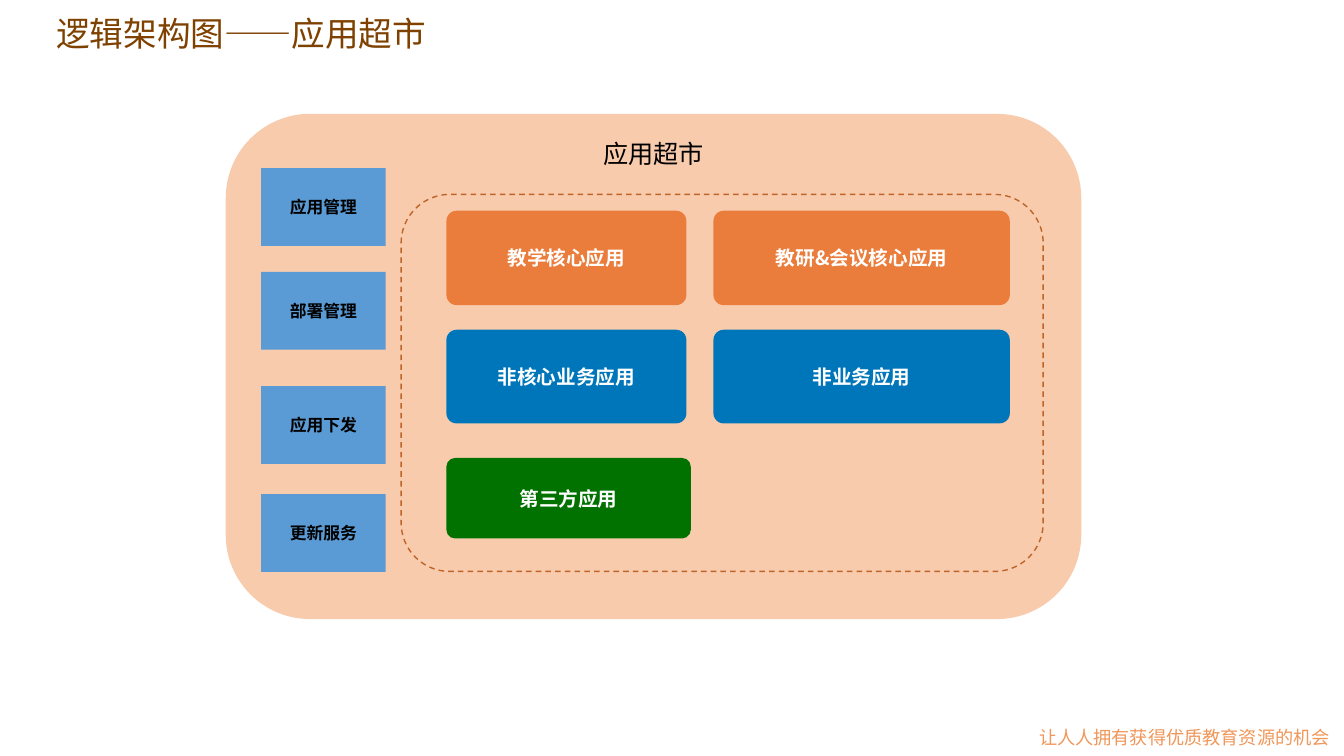
from dataclasses import dataclass

from lxml import etree
from pptx import Presentation
from pptx.dml.color import RGBColor
from pptx.enum.dml import MSO_LINE
from pptx.enum.shapes import MSO_SHAPE
from pptx.enum.text import MSO_ANCHOR, PP_ALIGN
from pptx.oxml.ns import qn
from pptx.util import Cm, Pt

RECTANGLE = MSO_SHAPE.RECTANGLE
ROUNDED = MSO_SHAPE.ROUNDED_RECTANGLE
PANEL_SHAPE = MSO_SHAPE.FLOWCHART_ALTERNATE_PROCESS
DASH = MSO_LINE.DASH
TOP, MIDDLE = MSO_ANCHOR.TOP, MSO_ANCHOR.MIDDLE
LEFT, CENTER = PP_ALIGN.LEFT, PP_ALIGN.CENTER

WHITE = RGBColor(0xFF, 0xFF, 0xFF)
BLACK = RGBColor(0x00, 0x00, 0x00)
BROWN = RGBColor(0x7E, 0x41, 0x00)
PEACH = RGBColor(0xF8, 0xCB, 0xAD)
SKY = RGBColor(0x5B, 0x9B, 0xD5)
ORANGE = RGBColor(0xEB, 0x7D, 0x3C)
BLUE = RGBColor(0x00, 0x76, 0xBA)
GREEN = RGBColor(0x01, 0x71, 0x00)
RUST = RGBColor(0xBE, 0x64, 0x27)
SLOGAN_ORANGE = RGBColor(0xED, 0x7D, 0x31)

SANS_SC = "Noto Sans CJK SC"
SANS_JP = "Noto Sans CJK JP"
ARIAL = "Arial"

SERVICES = [("应用管理", 1.37), ("部署管理", 3.98), ("应用下发", 6.86), ("更新服务", 9.58)]
# Rows of applications: top, height, colour, font, then (label, left, width)
APPLICATIONS = [
    (0.41, 2.38, ORANGE, SANS_SC,
     [("教学核心应用", 1.14, 6.05), ("教研&会议核心应用", 7.87, 7.47)]),
    (3.41, 2.36, BLUE, SANS_SC,
     [("非核心业务应用", 1.14, 6.05), ("非业务应用", 7.87, 7.47)]),
    (6.64, 2.03, GREEN, ARIAL, [("第三方应用", 1.14, 6.16)]),
]


@dataclass
class Box:
    """A rectangle measured in centimetres."""
    left: float
    top: float
    width: float
    height: float

    def inner(self, left, top, width, height):
        return Box(self.left + left, self.top + top, width, height)

    def lengths(self):
        return Cm(self.left), Cm(self.top), Cm(self.width), Cm(self.height)


def write(shape, words, size, font_name, color, bold=False,
          align=CENTER, anchor=MIDDLE, margin=0.0, wrap=True):
    frame = shape.text_frame
    frame.word_wrap = wrap
    frame.vertical_anchor = anchor
    frame.margin_left = frame.margin_right = Cm(margin)
    frame.margin_top = frame.margin_bottom = Cm(margin)
    para = frame.paragraphs[0]
    para.text = words
    para.alignment = align
    font = para.font
    font.size, font.bold, font.name = Pt(size), bold, font_name
    font.color.rgb = color
    if font_name != ARIAL:
        properties = para._p.pPr.find(qn("a:defRPr"))
        etree.SubElement(properties, qn("a:ea"), typeface=font_name)


def add_block(page, kind, box, fill=None, corner=None):
    shape = page.shapes.add_shape(kind, *box.lengths())
    shape.shadow.inherit = False
    shape.line.fill.background()
    if fill is None:
        shape.fill.background()
    else:
        shape.fill.solid()
        shape.fill.fore_color.rgb = fill
    if corner is not None:
        shape.adjustments[0] = corner
    return shape


def add_footer(page, box):
    """Slogan at the right, softened by a translucent white band."""
    slogan = page.shapes.add_textbox(*box.inner(26.14, 0.23, 7.47, 0.69).lengths())
    write(slogan, "让人人拥有获得优质教育资源的机会", 13, SANS_JP, SLOGAN_ORANGE,
          align=LEFT, anchor=TOP, margin=0.05, wrap=False)
    band = add_block(page, RECTANGLE, box, WHITE)
    color = band.fill._xPr.find(qn("a:solidFill"))[0]
    etree.SubElement(color, qn("a:alpha"), val="20000")


def add_title(page, box):
    title = page.shapes.add_textbox(*box.lengths())
    write(title, "逻辑架构图——应用超市", 24, SANS_SC, BROWN,
          align=LEFT, anchor=TOP, margin=0.05)


def add_services(page, box):
    for label, top in SERVICES:
        service = add_block(page, RECTANGLE, box.inner(0.89, top, 3.14, 1.96), SKY)
        write(service, label, 12, ARIAL, BLACK, bold=True, margin=0.1)


def add_applications(page, box):
    outline = add_block(page, ROUNDED, box, corner=0.129)
    outline.line.color.rgb = RUST
    outline.line.width = Pt(1)
    outline.line.dash_style = DASH
    for top, height, color, font_name, row in APPLICATIONS:
        for label, left, width in row:
            place = box.inner(left, top, width, height)
            application = add_block(page, ROUNDED, place, color, corner=0.109)
            write(application, label, 14, font_name, WHITE, bold=True, wrap=False)


def add_market(page, box):
    panel = add_block(page, PANEL_SHAPE, box, PEACH)
    write(panel, "应用超市", 18, SANS_SC, BLACK, anchor=TOP)
    add_services(page, box)
    add_applications(page, box.inner(4.42, 2.03, 16.18, 9.5))


def main():
    deck = Presentation()
    deck.slide_width, deck.slide_height = Cm(33.87), Cm(19.05)
    page = deck.slides.add_slide(deck.slide_layouts[6])
    add_footer(page, Box(0, 18.03, 33.87, 1.02))
    add_title(page, Box(1.37, 0.28, 11.51, 1.14))
    add_market(page, Box(5.69, 2.87, 21.56, 12.73))
    deck.save("out.pptx")


if __name__ == "__main__":
    main()
